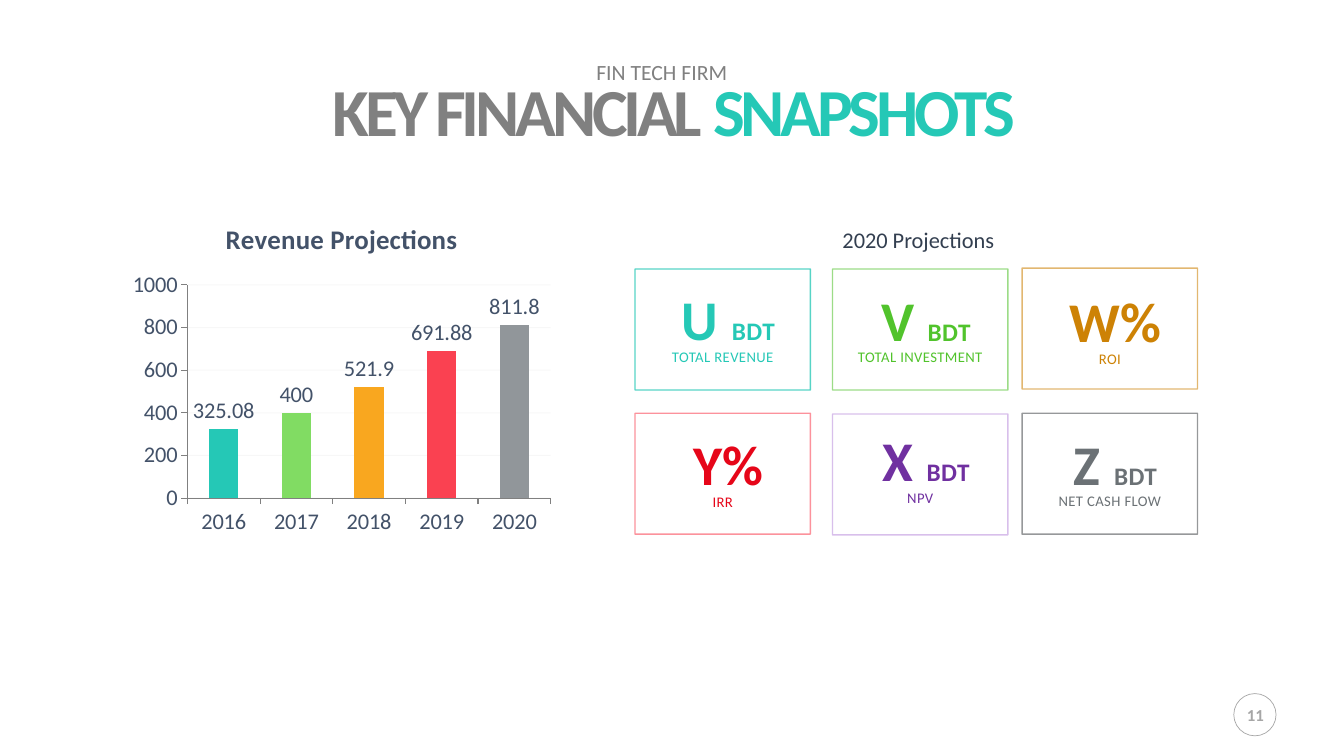
from lxml import etree
from pptx import Presentation
from pptx.chart.data import CategoryChartData
from pptx.dml.color import RGBColor
from pptx.enum.chart import XL_CHART_TYPE, XL_LABEL_POSITION, XL_TICK_MARK
from pptx.enum.shapes import MSO_SHAPE
from pptx.enum.text import MSO_AUTO_SIZE, PP_ALIGN
from pptx.oxml.ns import qn
from pptx.util import Pt

COLUMNS = XL_CHART_TYPE.COLUMN_CLUSTERED
OUTSIDE_END = XL_LABEL_POSITION.OUTSIDE_END
TICK_OUT, TICK_NONE = XL_TICK_MARK.OUTSIDE, XL_TICK_MARK.NONE
RECTANGLE, OVAL = MSO_SHAPE.RECTANGLE, MSO_SHAPE.OVAL
CENTER, LEFT = PP_ALIGN.CENTER, PP_ALIGN.LEFT
GROW = MSO_AUTO_SIZE.SHAPE_TO_FIT_TEXT

FONT = "Calibri"
GREY, TEAL, SILVER, SLATE, NAVY = "808080", "25C8B6", "A6A6A6", "435269", "333F50"

REVENUE = [
    ("2016", 325.08, TEAL),
    ("2017", 400, "81DC63"),
    ("2018", 521.9, "F9A71F"),
    ("2019", 691.88, "FA4151"),
    ("2020", 811.8, "91969A"),
]

CARD_LEFTS = (453.6, 594.7, 730.1)
CARD_WIDTH, CARD_HEIGHT = 125.3, 86.4
CAPTION_INSET, CAPTION_DROP = 9, 45
NUMBER_SHIFT, NUMBER_HEIGHT = 4, 48.2
# columns: value, unit, caption, text colour, line colour, line opacity, card top, number top, number width
CARDS = [
    ("U ", "BDT", "TOTAL REVENUE", TEAL, TEAL, 77, 192.2, 203.2, 67),
    ("V ", "BDT", "TOTAL INVESTMENT", "51C32C", "51C32C", 57, 192.2, 203.6, 65),
    ("W%", "", "ROI", "CD8205", "CD8205", 57, 191.5, 205, 66),
    ("Y%", "", "IRR", "E60619", "FA4151", 57, 295.2, 306.8, 51),
    ("X ", "BDT", "NPV", "7030A0", "BC8FDD", 57, 295.7, 304, 63),
    ("Z ", "BDT", "NET CASH FLOW", "6B7175", "484B4E", 57, 295.2, 306.6, 60.5),
]


def paint(color_format, value, opacity=100):
    color_format.rgb = RGBColor.from_string(value)
    if opacity < 100:
        for node in color_format._xFill.iter(qn("a:srgbClr")):
            etree.SubElement(node, qn("a:alpha"), val=str(opacity * 1000))


def style_font(font, size, color, bold=False):
    for name, value in {"name": FONT, "size": Pt(size), "bold": bold}.items():
        setattr(font, name, value)
    paint(font.color, color)


def add_text(page, area, spans, align=CENTER, insets=(0, 0), wrap=True, grow=True, spacing=0, layout=None):
    box = page.shapes.add_textbox(*map(Pt, area))
    frame = box.text_frame
    side, top = map(Pt, insets)
    frame_format = {"margin_left": side, "margin_right": side, "margin_top": top,
                    "margin_bottom": top, "word_wrap": wrap}
    for name, value in frame_format.items():
        setattr(frame, name, value)
    if grow:
        frame.auto_size = GROW
    para = frame.paragraphs[0]
    for name, value in {"alignment": align, **(layout or {})}.items():
        setattr(para, name, value)
    for text, size, color, bold in spans:
        span = para.add_run()
        span.text = text
        style_font(span.font, size, color, bold)
        if spacing:
            span.font._element.set("spc", str(int(spacing * 100)))


def add_outline(page, kind, area, color, width, opacity=100):
    shape = page.shapes.add_shape(kind, *map(Pt, area))
    shape.shadow.inherit = False
    shape.fill.background()
    shape.line.width = Pt(width)
    shape.line.fill.solid()
    paint(shape.line.fill.fore_color, color, opacity)


def add_revenue_chart(page):
    data = CategoryChartData()
    data.categories = [year for year, _, _ in REVENUE]
    data.add_series("Series 1", [amount for _, amount, _ in REVENUE])
    chart = page.shapes.add_chart(COLUMNS, *map(Pt, (88.6, 144.7, 311, 242.6)), data).chart
    style_font(chart.font, 16, SLATE)
    chart.has_legend = False
    chart.has_title = True
    title = chart.chart_title.text_frame
    title.text = "Revenue Projections"
    style_font(title.paragraphs[0].runs[0].font, 19.2, SLATE, True)

    for axis in (chart.category_axis, chart.value_axis):
        axis.major_tick_mark = TICK_OUT
        axis.minor_tick_mark = TICK_NONE
        axis.format.line.width = Pt(0.75)
        paint(axis.format.line.color, GREY)
    values = chart.value_axis
    for name, value in {"minimum_scale": 0, "maximum_scale": 1000, "major_unit": 200}.items():
        setattr(values, name, value)
    grid = values.major_gridlines.format.line
    grid.width = Pt(0.75)
    grid.fill.solid()
    paint(grid.fill.fore_color, GREY, 5)

    plot = chart.plots[0]
    plot.gap_width = 150
    plot.vary_by_categories = False
    plot.has_data_labels = True
    labels = plot.data_labels
    labels.show_value = True
    labels.position = OUTSIDE_END
    style_font(labels.font, 16, SLATE)
    for index, (_, _, color) in enumerate(REVENUE):
        fill = plot.series[0].points[index].format.fill
        fill.solid()
        paint(fill.fore_color, color)


def add_card(page, left, card):
    value, unit, caption, color, line, opacity, top, number_top, number_width = card
    add_outline(page, RECTANGLE, (left, top, CARD_WIDTH, CARD_HEIGHT), line, 1, opacity)
    add_text(page, (left + CAPTION_INSET, number_top + CAPTION_DROP, CARD_WIDTH - 2 * CAPTION_INSET, 13),
             [(caption, 10.5, color, False)], spacing=0.3)
    spans = [(value, 40, color, True)]
    if unit:
        spans.append((unit, 18, color, True))
    number_left = left + (CARD_WIDTH - number_width) / 2 + NUMBER_SHIFT
    add_text(page, (number_left, number_top, number_width, NUMBER_HEIGHT), spans, wrap=False, spacing=0.3)


def main():
    deck = Presentation()
    deck.slide_width, deck.slide_height = Pt(960), Pt(540)
    page = deck.slides.add_slide(deck.slide_layouts[6])

    add_text(page, (882, 499.7, 29.5, 21.6), [("11", 12, SILVER, True)], insets=(7.2, 3.6), wrap=False)
    add_outline(page, OVAL, (881.3, 495.4, 30.2, 30.2), SILVER, 0.5)
    add_text(page, (147.6, 48.2, 667.4, 61.9),
             [("KEY FINANCIAL", 48, GREY, True), (" SNAPSHOTS", 48, TEAL, True)],
             insets=(3.6, 1.4), spacing=-3)
    add_text(page, (243.4, 33.8, 458.6, 33.1), [("FIN TECH FIRM", 15.5, GREY, False)],
             insets=(8.6, 4.3), grow=False, layout={"line_spacing": 1.2, "space_before": Pt(3.1)})
    add_revenue_chart(page)
    add_text(page, (594.7, 154.1, 124.6, 28.8), [("2020 Projections", 16, NAVY, False)],
             align=LEFT, insets=(7.2, 3.6), wrap=False, layout={"line_spacing": 1.2})
    for index, card in enumerate(CARDS):
        add_card(page, CARD_LEFTS[index % len(CARD_LEFTS)], card)
    deck.save("out.pptx")


if __name__ == "__main__":
    main()
